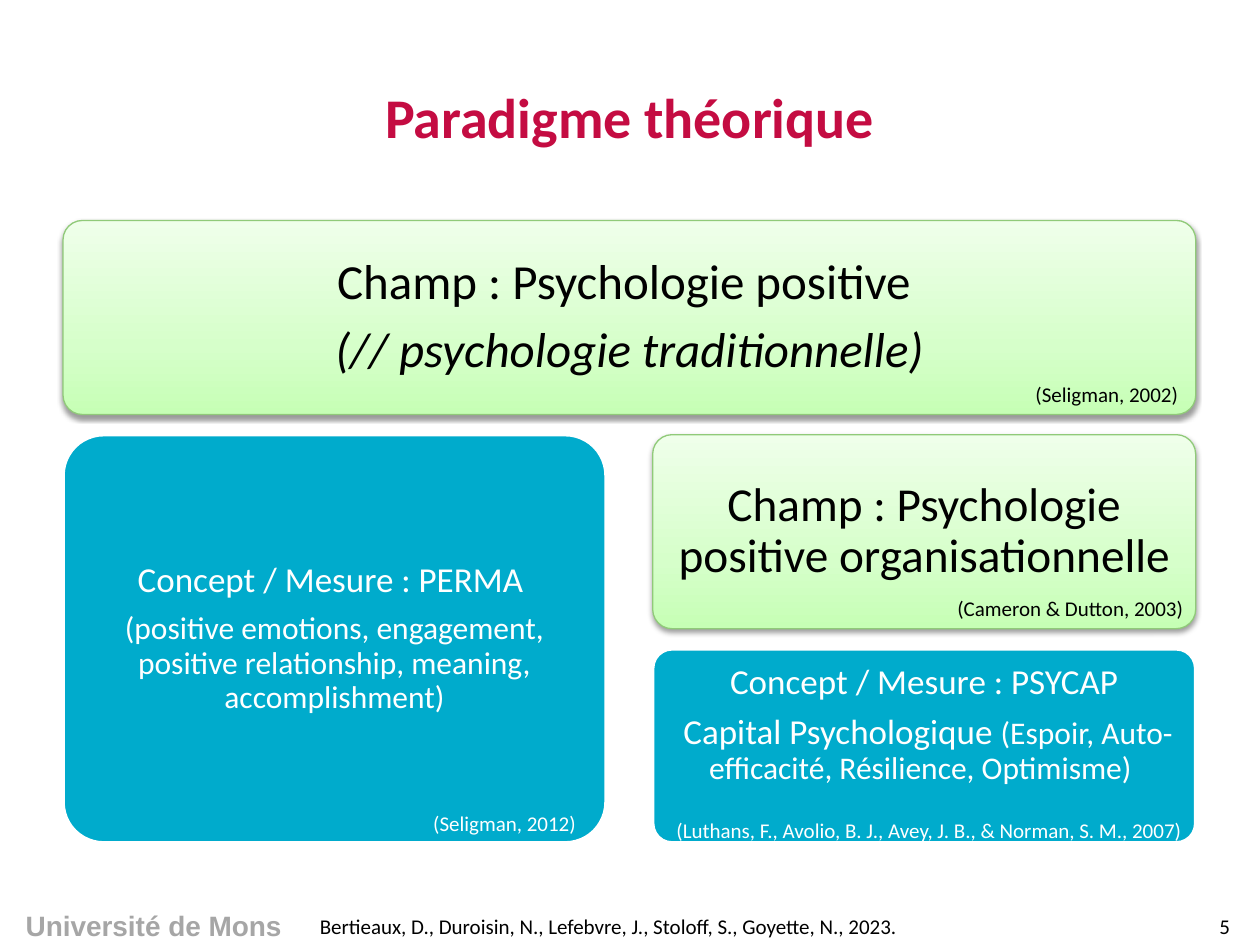
from collections import namedtuple

from lxml import etree
from pptx import Presentation
from pptx.dml.color import RGBColor
from pptx.enum.shapes import MSO_SHAPE
from pptx.enum.text import MSO_ANCHOR, PP_ALIGN
from pptx.oxml.ns import qn
from pptx.util import Inches, Pt

ROUNDED = MSO_SHAPE.ROUNDED_RECTANGLE
LEFT, CENTER = PP_ALIGN.LEFT, PP_ALIGN.CENTER
TOP, MIDDLE = MSO_ANCHOR.TOP, MSO_ANCHOR.MIDDLE

COLORS = {
    "title": "C40C42",
    "brand": "A6A6A6",
    "black": "000000",
    "white": "FFFFFF",
    "concept": "00ABCC",
    "field_line": "90CA79",
}
FIELD_STOPS = ((0, "C6FFB5"), (35, "D6FFCA"), (100, "EFFFEA"))

Box = namedtuple("Box", "left top width height")
PAGE = Box(0, 0, 10, 7.5)
GRID = Box(0.5, 1.75, 8.99, 4.94)
GAP_X, GAP_Y = 0.37, 0.16
COLUMNS, ROWS = 2, 3


def cell(column, row, columns=1, rows=1):
    width = (GRID.width - GAP_X * (COLUMNS - 1)) / COLUMNS
    height = (GRID.height - GAP_Y * (ROWS - 1)) / ROWS
    return Box(
        GRID.left + column * (width + GAP_X),
        GRID.top + row * (height + GAP_Y),
        columns * width + (columns - 1) * GAP_X,
        rows * height + (rows - 1) * GAP_Y,
    )


def emu(box):
    return [Inches(length) for length in box]


def color(name):
    return RGBColor.from_string(COLORS[name])


def add_span(para, text, size, tint, font="Calibri", bold=False, italic=False):
    span = para.add_run()
    span.text = text
    span.font.name = font
    span.font.size = Pt(size)
    span.font.bold = bold
    span.font.italic = italic
    span.font.color.rgb = color(tint)


def add_label(page, box, text, tint, size=12, align=LEFT, anchor=TOP, **style):
    label = page.shapes.add_textbox(*emu(box))
    frame = label.text_frame
    frame.word_wrap = True
    frame.vertical_anchor = anchor
    para = frame.paragraphs[0]
    para.alignment = align
    add_span(para, text, size, tint, **style)


def paint_field(card):
    card.fill.gradient()
    card.fill.gradient_angle = 90
    stops = card._element.spPr.find(qn("a:gradFill")).find(qn("a:gsLst"))
    for stop in list(stops):
        stops.remove(stop)
    for share, tint in FIELD_STOPS:
        stop = etree.SubElement(stops, qn("a:gs"), pos=str(share * 1000))
        etree.SubElement(stop, qn("a:srgbClr"), val=tint)
    card.line.color.rgb = color("field_line")
    card.line.width = Pt(0.75)
    effects = card._element.spPr.find(qn("a:effectLst"))
    shadow = etree.SubElement(
        effects, qn("a:outerShdw"), blurRad=str(Pt(3.1)), dist=str(Pt(1.6)),
        dir="5400000", rotWithShape="0",
    )
    tint = etree.SubElement(shadow, qn("a:srgbClr"), val=COLORS["black"])
    etree.SubElement(tint, qn("a:alpha"), val="38000")


def paint_concept(card):
    card.fill.solid()
    card.fill.fore_color.rgb = color("concept")
    card.line.color.rgb = color("white")
    card.line.width = Pt(2)


def add_card(page, box, paint, tint, paras, inset, source, source_at, anchor=MIDDLE):
    card = page.shapes.add_shape(ROUNDED, *emu(box))
    card.adjustments[0] = 0.1
    card.shadow.inherit = False
    paint(card)
    frame = card.text_frame
    frame.word_wrap = True
    frame.vertical_anchor = anchor
    frame.margin_left = frame.margin_right = Inches(inset)
    frame.margin_top = frame.margin_bottom = Inches(inset)
    for index, spans in enumerate(paras):
        para = frame.add_paragraph() if index else frame.paragraphs[0]
        para.alignment = CENTER
        para.line_spacing = 0.9
        para.space_after = Pt(round(spans[0][1] * 0.33))
        for text, size, italic in spans:
            add_span(para, text, size, tint, italic=italic)
    left, rise = source_at
    source_box = Box(box.left + left, box.top + box.height - rise,
                     box.width - left + 0.1, 0.3)
    add_label(page, source_box, source, tint)


def add_title(page, box, text):
    title = page.shapes.title
    title.left, title.top, title.width, title.height = emu(box)
    title.text_frame.vertical_anchor = MIDDLE
    para = title.text_frame.paragraphs[0]
    para.alignment = CENTER
    add_span(para, text, 32, "title", bold=True)


def add_footer(page, box):
    brand, authors, number = 0.244, 0.7, 0.056
    add_label(page, Box(box.left, box.top - 0.04, box.width * brand, 0.37),
              "Université de Mons", "brand", 16, CENTER, font="Arial", bold=True)
    add_label(page, Box(box.width * brand, box.top, box.width * authors, box.height),
              "Bertieaux, D., Duroisin, N., Lefebvre, J., Stoloff, S., Goyette, N., 2023.",
              "black", anchor=MIDDLE)
    add_label(page, Box(box.width * (1 - number), box.top, box.width * number, box.height),
              "5", "black", align=CENTER, anchor=MIDDLE)


def add_paradigm(page):
    add_card(page, cell(0, 0, columns=2), paint_field, "black",
             [[("Champ : Psychologie positive ", 28, False)],
              [("(// psychologie traditionnelle)", 28, True)]],
             0.12, "(Seligman, 2002)", (7.62, 0.31))
    add_card(page, cell(0, 1, rows=2), paint_concept, "white",
             [[("Concept / Mesure : PERMA ", 20, False)],
              [("(positive emotions, engagement, positive relationship, meaning, "
                "accomplishment)", 18, False)]],
             0.08, "(Seligman, 2012)", (2.84, 0.31))
    add_card(page, cell(1, 1), paint_field, "black",
             [[("Champ : Psychologie positive organisationnelle", 27, False)]],
             0.11, "(Cameron & Dutton, 2003)", (2.32, 0.31))
    add_card(page, cell(1, 2), paint_concept, "white",
             [[("Concept / Mesure : PSYCAP", 20, False)],
              [(" Capital Psychologique ", 20, False),
               ("(Espoir, Auto-efficacité, Résilience, Optimisme) ", 18, False)]],
             0.08, "(Luthans, F., Avolio, B. J., Avey, J. B., & Norman, S. M., 2007)",
             (0.09, 0.25), TOP)


def main():
    deck = Presentation()
    deck.slide_width, deck.slide_height = Inches(PAGE.width), Inches(PAGE.height)
    page = deck.slides.add_slide(deck.slide_layouts[5])
    add_title(page, Box(PAGE.width * 0.05, PAGE.height * 0.04, PAGE.width * 0.9, 1.25),
              "Paradigme théorique")
    add_paradigm(page)
    add_footer(page, Box(0, PAGE.height * 0.96, PAGE.width, PAGE.height * 0.04))
    deck.save("out.pptx")


if __name__ == "__main__":
    main()
